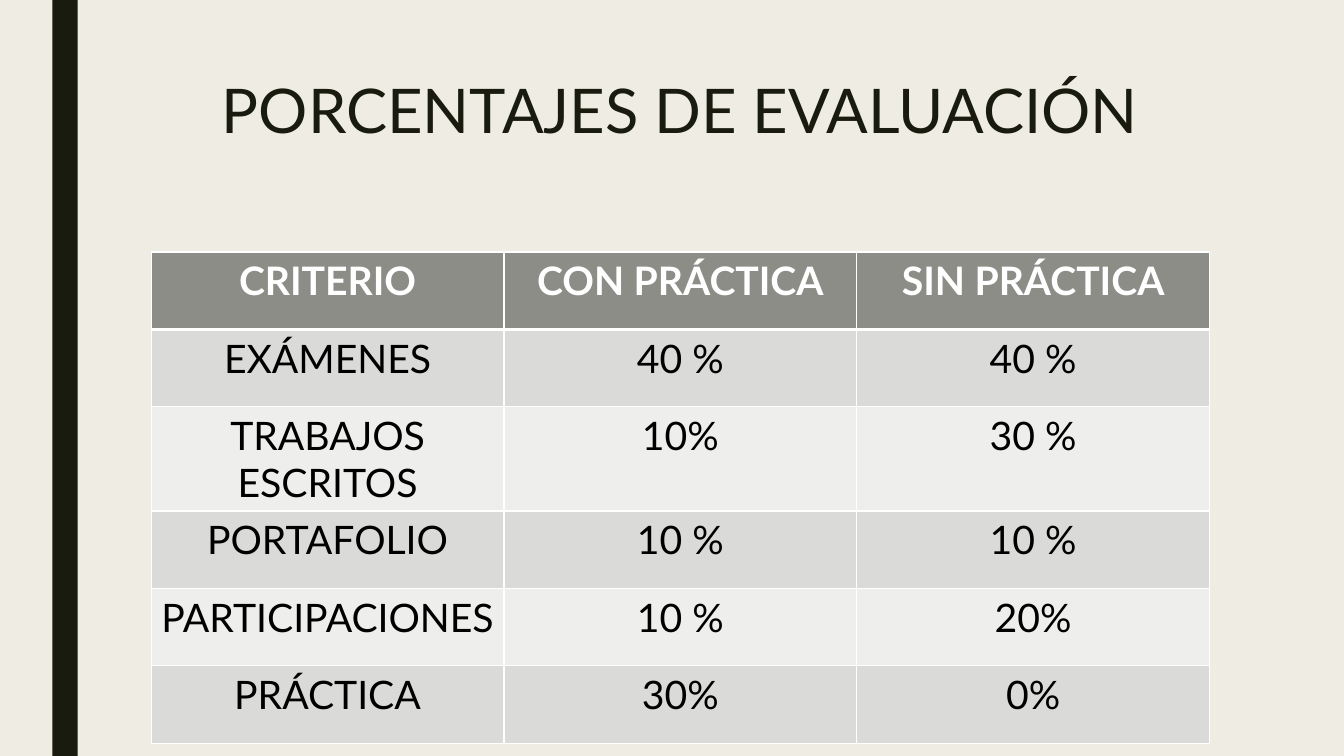
from dataclasses import dataclass

from lxml.etree import SubElement
from pptx import Presentation
from pptx.dml.color import RGBColor as RGB
from pptx.enum.shapes import MSO_SHAPE as Shape
from pptx.enum.text import MSO_ANCHOR as Anchor, MSO_AUTO_SIZE as AutoSize, PP_ALIGN as Align
from pptx.oxml.ns import qn
from pptx.util import Cm, Pt


@dataclass(frozen=True)
class Theme:
    font: str = "Lato"
    background: str = "EFEDE3"
    dark: str = "191B0E"
    header: str = "8C8D86"
    bands: tuple = ("DADBD9", "EEEEED")
    white: str = "FFFFFF"
    black: str = "000000"
    title_size: int = 44
    table_size: int = 28
    thin: int = 1
    thick: int = 3


THEME = Theme()

ROWS = [
    ("CRITERIO", "CON PRÁCTICA", "SIN PRÁCTICA"),
    ("EXÁMENES", "40 %", "40 %"),
    ("TRABAJOS ESCRITOS", "10%", "30 %"),
    ("PORTAFOLIO", "10 %", "10 %"),
    ("PARTICIPACIONES", "10 %", "20%"),
    ("PRÁCTICA", "30%", "0%"),
]


def paint(shape_fill, color):
    shape_fill.solid()
    shape_fill.fore_color.rgb = RGB.from_string(color)


def format_text(tf, size, color, bold=False):
    p = tf.paragraphs[0]
    p.alignment = Align.CENTER
    font = p.runs[0].font
    font.name, font.size, font.bold = THEME.font, Pt(size), bold
    font.color.rgb = RGB.from_string(color)
    return p


def add_side_bar(s, left, top, width, height):
    bar = s.shapes.add_shape(Shape.RECTANGLE, left, top, width, height)
    bar.shadow.inherit = False
    paint(bar.fill, THEME.dark)
    bar.line.fill.background()


def add_title(s, left, top, width, height, text):
    title = s.shapes.title
    title.left, title.top, title.width, title.height = left, top, width, height
    tf = title.text_frame
    tf.text = text
    tf.word_wrap = True
    tf.auto_size = AutoSize.NONE
    tf.vertical_anchor = Anchor.TOP
    format_text(tf, THEME.title_size, THEME.dark).line_spacing = 0.89


def set_borders(cell, top, bottom):
    tcPr = cell._tc.get_or_add_tcPr()
    widths = {"a:lnL": THEME.thin, "a:lnR": THEME.thin, "a:lnT": top, "a:lnB": bottom}
    for tag, width in widths.items():
        ln = SubElement(tcPr, qn(tag), w=str(Pt(width)))
        SubElement(SubElement(ln, qn("a:solidFill")), qn("a:srgbClr"), val=THEME.white)


def add_grades_table(s, left, top, width, height, rows):
    table = s.shapes.add_table(len(rows), len(rows[0]), left, top, width, height).table
    for i, row in enumerate(rows):
        is_header = i == 0
        for j, text in enumerate(row):
            cell = table.cell(i, j)
            cell.text_frame.text = text
            format_text(cell.text_frame, THEME.table_size,
                        THEME.white if is_header else THEME.black, is_header)
            # The heavy rule lies between the header and the first row
            set_borders(cell, THEME.thick if i == 1 else THEME.thin,
                        THEME.thick if is_header else THEME.thin)
            paint(cell.fill, THEME.header if is_header else THEME.bands[(i - 1) % 2])


def build_evaluation_slide(prs):
    s = prs.slides.add_slide(prs.slide_layouts[5])
    paint(s.background.fill, THEME.background)
    left, width = Cm(3.81), Cm(26.67)

    # Side bar
    add_side_bar(s, Cm(1.32), 0, Cm(0.64), prs.slide_height)
    # Title
    add_title(s, left, Cm(1.9), width, Cm(4.11), "PORCENTAJES DE EVALUACIÓN")
    # Grading table
    add_grades_table(s, left, Cm(6.35), width, Cm(11.7), ROWS)


def main():
    prs = Presentation()
    prs.slide_width, prs.slide_height = Cm(33.87), Cm(19.05)
    build_evaluation_slide(prs)
    prs.save("out.pptx")


if __name__ == "__main__":
    main()
